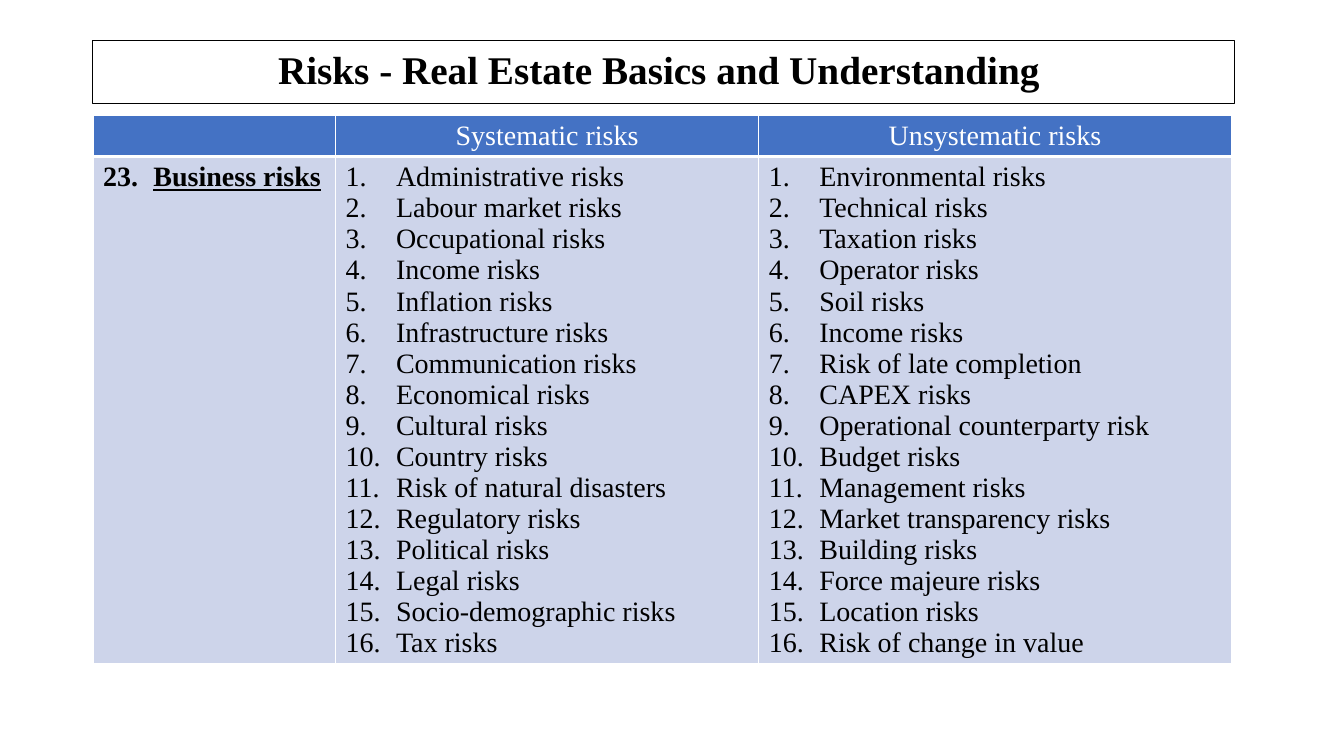
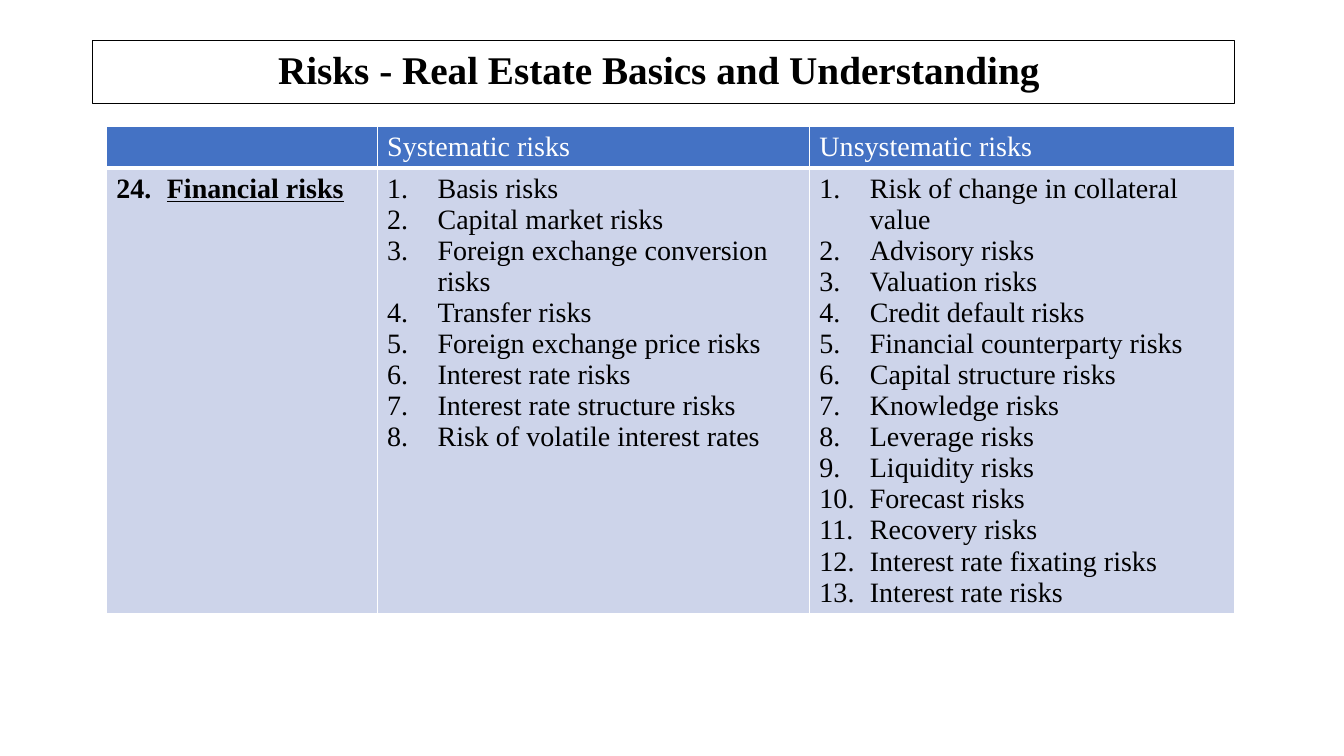
from lxml.etree import SubElement
from pptx import Presentation
from pptx.dml.color import RGBColor
from pptx.enum.text import MSO_ANCHOR, MSO_AUTO_SIZE, PP_ALIGN
from pptx.oxml import parse_xml
from pptx.oxml.ns import nsdecls, qn
from pptx.util import Pt

FONT = "Times New Roman"
BLACK, WHITE, BLUE, PALE = "000000", "FFFFFF", "4472C4", "CDD4EA"
TITLE = "Risks - Real Estate Basics and Understanding "
TITLE_BOX = (66, 28.8, 816, 45.2)
HEADINGS = ("Systematic risks", "Unsystematic risks")
HEADER_HEIGHT, LINE_HEIGHT, CELL_PADDING = 29.5, 22.2, 7.2

BUSINESS = {
    "number": 23, "name": "Business risks", "lines": 16,
    "origin": (66.4, 82.4), "widths": (173.3, 302.4, 337.5),
    "heading_align": PP_ALIGN.CENTER,
    "systematic": [
        "Administrative risks", "Labour market risks", "Occupational risks",
        "Income risks", "Inflation risks", "Infrastructure risks",
        "Communication risks", "Economical risks", "Cultural risks",
        "Country risks", "Risk of natural disasters", "Regulatory risks",
        "Political risks", "Legal risks", "Socio-demographic risks", "Tax risks",
    ],
    "unsystematic": [
        "Environmental risks", "Technical risks", "Taxation risks",
        "Operator risks", "Soil risks", "Income risks",
        "Risk of late completion", "CAPEX risks",
        "Operational counterparty risk", "Budget risks", "Management risks",
        "Market transparency risks", "Building risks", "Force majeure risks",
        "Location risks", "Risk of change in value",
    ],
}
FINANCIAL = {
    "number": 24, "name": "Financial risks", "lines": 14,
    "origin": (76, 90.6), "widths": (193.4, 308.8, 303.6),
    "heading_align": PP_ALIGN.LEFT,
    "systematic": [
        "Basis risks", "Capital market risks",
        "Foreign exchange conversion risks", "Transfer risks",
        "Foreign exchange price risks", "Interest rate risks",
        "Interest rate structure risks", "Risk of volatile interest rates",
    ],
    "unsystematic": [
        "Risk of change in collateral value", "Advisory risks",
        "Valuation risks", "Credit default risks",
        "Financial counterparty risks", "Capital structure risks",
        "Knowledge risks", "Leverage risks", "Liquidity risks",
        "Forecast risks", "Recovery risks", "Interest rate fixating risks",
        "Interest rate risks",
    ],
}


def color(value):
    """Turn a hex string into a colour."""
    return RGBColor.from_string(value)


def style_runs(para, size, ink, bold=False, underline=False):
    """Format every run of a paragraph."""
    for span in para.runs:
        font = span.font
        font.name, font.size = FONT, Pt(size)
        font.bold, font.underline = bold, underline
        font.color.rgb = color(ink)


def add_number(para, start):
    """Give a paragraph an automatic number and a hanging indent."""
    properties = para._p.get_or_add_pPr()
    properties.set("marL", str(Pt(36)))
    properties.set("indent", str(Pt(-36)))
    bullet_color = SubElement(properties, qn("a:buClr"))
    SubElement(bullet_color, qn("a:srgbClr")).set("val", BLACK)
    numbering = SubElement(properties, qn("a:buAutoNum"))
    numbering.set("type", "arabicPeriod")
    if start > 1:
        numbering.set("startAt", str(start))


def style_cell(cell, fill, top, bottom):
    """Set the fill and the white borders of a cell."""
    cell.fill.solid()
    cell.fill.fore_color.rgb = color(fill)
    borders = {"L": 1, "R": 1, "T": top, "B": bottom}
    for index, (side, width) in enumerate(borders.items()):
        cell._tc.get_or_add_tcPr().insert(index, parse_xml(
            f'<a:ln{side} {nsdecls("a")} w="{Pt(width)}"><a:solidFill>'
            f'<a:srgbClr val="{WHITE}"/></a:solidFill></a:ln{side}>'))


def fill_list(cell, items, start=1, emphasis=False):
    """Write a numbered list into a body cell."""
    style_cell(cell, PALE, top=3, bottom=1)
    cell.text_frame.text = "\n".join(items)
    for para in cell.text_frame.paragraphs:
        add_number(para, start)
        style_runs(para, 20, BLACK, emphasis, emphasis)


def add_title(page, box):
    """Place the framed title in its box."""
    title = page.shapes.title
    title.left, title.top, title.width, title.height = map(Pt, box)
    title.line.color.rgb = color(BLACK)
    title.line.width = Pt(0.75)
    frame = title.text_frame
    frame.text = TITLE
    frame.word_wrap = True
    frame.auto_size = MSO_AUTO_SIZE.NONE
    frame.vertical_anchor = MSO_ANCHOR.MIDDLE
    para = frame.paragraphs[0]
    para.alignment, para.line_spacing = PP_ALIGN.CENTER, 0.9
    style_runs(para, 28, BLACK, bold=True)


def add_risk_table(page, risk):
    """Place the table of one risk class at its origin."""
    heights = (HEADER_HEIGHT, risk["lines"] * LINE_HEIGHT + CELL_PADDING)
    box = (*risk["origin"], sum(risk["widths"]), sum(heights))
    table = page.shapes.add_table(2, 3, *map(Pt, box)).table
    for column, width in zip(table.columns, risk["widths"]):
        column.width = Pt(width)
    for row, height in zip(table.rows, heights):
        row.height = Pt(height)
    for index, heading in enumerate(("", *HEADINGS)):
        cell = table.cell(0, index)
        style_cell(cell, BLUE, top=1, bottom=3)
        cell.text_frame.text = heading
        para = cell.text_frame.paragraphs[0]
        para.alignment = risk["heading_align"]
        style_runs(para, 20, WHITE)
    fill_list(table.cell(1, 0), [risk["name"]], risk["number"], emphasis=True)
    fill_list(table.cell(1, 1), risk["systematic"])
    fill_list(table.cell(1, 2), risk["unsystematic"])


def add_risk_page(deck, risk):
    """Add one slide with the title and a risk table."""
    page = deck.slides.add_slide(deck.slide_layouts[5])
    add_title(page, TITLE_BOX)
    add_risk_table(page, risk)


def main():
    """Build and save the deck."""
    deck = Presentation()
    deck.slide_width, deck.slide_height = Pt(960), Pt(540)
    for risk in (BUSINESS, FINANCIAL):
        add_risk_page(deck, risk)
    deck.save("out.pptx")


if __name__ == "__main__":
    main()
